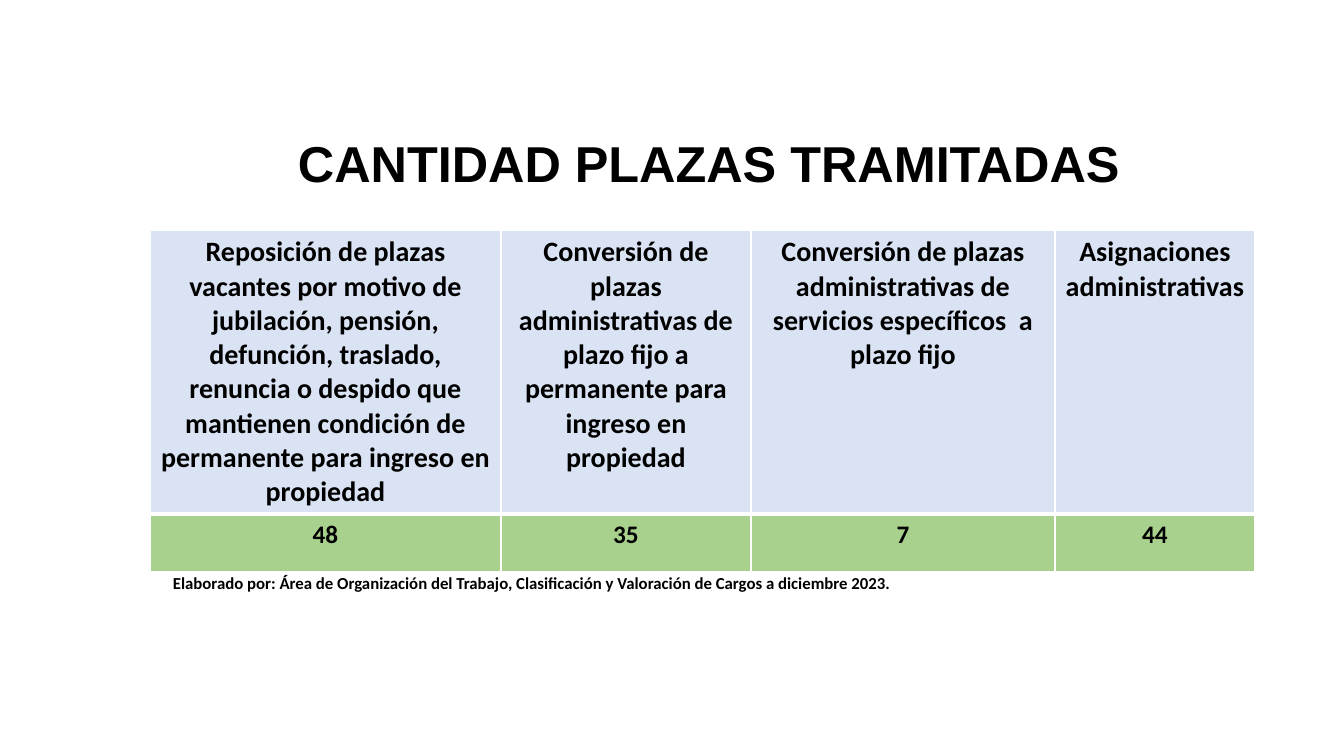
import pptx
import pptx.dml.color
import pptx.enum.text
import pptx.oxml
import pptx.oxml.ns
import pptx.util

PX = 914400 / 100.8
COLORS = {"text": "000000", "border": "FFFFFF", "header": "DAE3F3", "count": "A9D18E"}
CATEGORIES = [
    ("Reposición de plazas vacantes por motivo de jubilación, pensión, defunción, "
     "traslado, renuncia o despido que mantienen condición de permanente para "
     "ingreso en propiedad", 48, 351),
    ("Conversión de plazas administrativas de plazo fijo a permanente para "
     "ingreso en propiedad", 35, 250),
    ("Conversión de plazas administrativas de servicios específicos  a plazo fijo", 7, 304),
    ("Asignaciones administrativas", 44, 200),
]
ALIGN = pptx.enum.text.PP_ALIGN


def emu(px):
    return pptx.util.Emu(round(px * PX))


def rgb(name):
    return pptx.dml.color.RGBColor.from_string(COLORS[name])


def write(frame, text, size, font, align):
    frame.text = text
    paragraph = frame.paragraphs[0]
    paragraph.alignment = align
    style = paragraph.runs[0].font
    style.size = pptx.util.Pt(size)
    style.name = font
    style.bold = True
    style.color.rgb = rgb("text")
    return paragraph


def add_label(slide, box, text, size, font, align):
    label = slide.shapes.add_textbox(*map(emu, box))
    label.text_frame.word_wrap = True
    return label.text_frame, write(label.text_frame, text, size, font, align)


def add_title(slide, box):
    frame, heading = add_label(slide, box, "CANTIDAD PLAZAS TRAMITADAS", 36, "Arial", ALIGN.CENTER)
    frame.vertical_anchor = pptx.enum.text.MSO_ANCHOR.MIDDLE
    heading.line_spacing = 0.9


def add_borders(cell, bottom_width):
    properties = cell._tc.get_or_add_tcPr()
    for side, width in (("L", 1), ("R", 1), ("T", 1), ("B", bottom_width)):
        properties.append(pptx.oxml.parse_xml(
            f'<a:ln{side} {pptx.oxml.ns.nsdecls("a")} w="{width * 12700}"><a:solidFill>'
            f'<a:srgbClr val="{COLORS["border"]}"/></a:solidFill></a:ln{side}>'))


def add_counts_table(slide, box):
    table = slide.shapes.add_table(2, len(CATEGORIES), *map(emu, box)).table
    count_height = 58
    table.rows[0].height = emu(box[3] - count_height)
    table.rows[1].height = emu(count_height)
    for column, (category, count, width) in enumerate(CATEGORIES):
        table.columns[column].width = emu(width)
        rows = ((category, 20, "header", 3), (str(count), 18, "count", 1))
        for row, (text, size, fill, bottom_width) in enumerate(rows):
            cell = table.cell(row, column)
            write(cell.text_frame, text, size, "Calibri", ALIGN.CENTER)
            add_borders(cell, bottom_width)
            cell.fill.solid()
            cell.fill.fore_color.rgb = rgb(fill)


def add_credit(slide, box):
    add_label(slide, box, "Elaborado por: Área de Organización del Trabajo, Clasificación y "
              "Valoración de Cargos a diciembre 2023.", 12, "Calibri", ALIGN.LEFT)


def main():
    deck = pptx.Presentation()
    deck.slide_width, deck.slide_height = emu(1344), emu(756)
    slide = deck.slides.add_slide(deck.slide_layouts[6])
    # Heading, counts by category, and source credit
    add_title(slide, (113, 102, 1192, 128))
    add_counts_table(slide, (150, 230, 1105, 342))
    add_credit(slide, (163, 568, 784, 30))
    deck.save("out.pptx")


if __name__ == "__main__":
    main()
